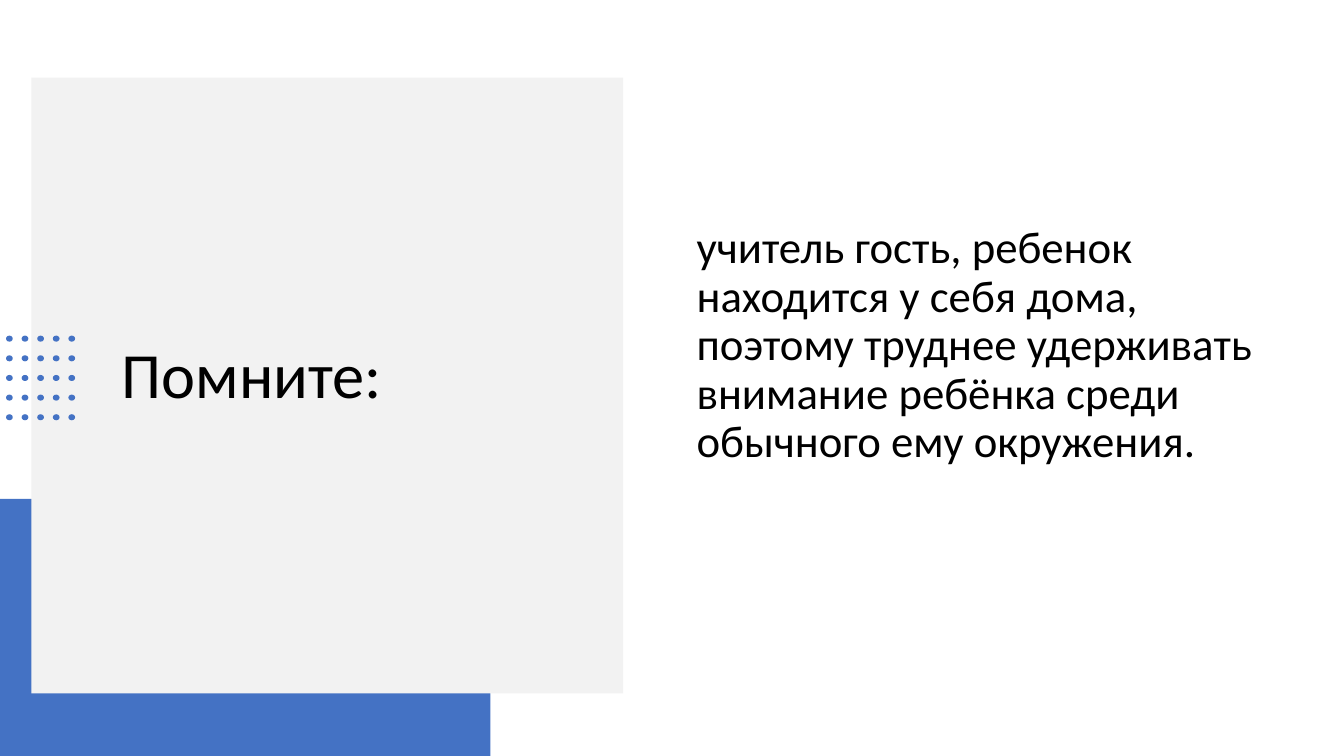
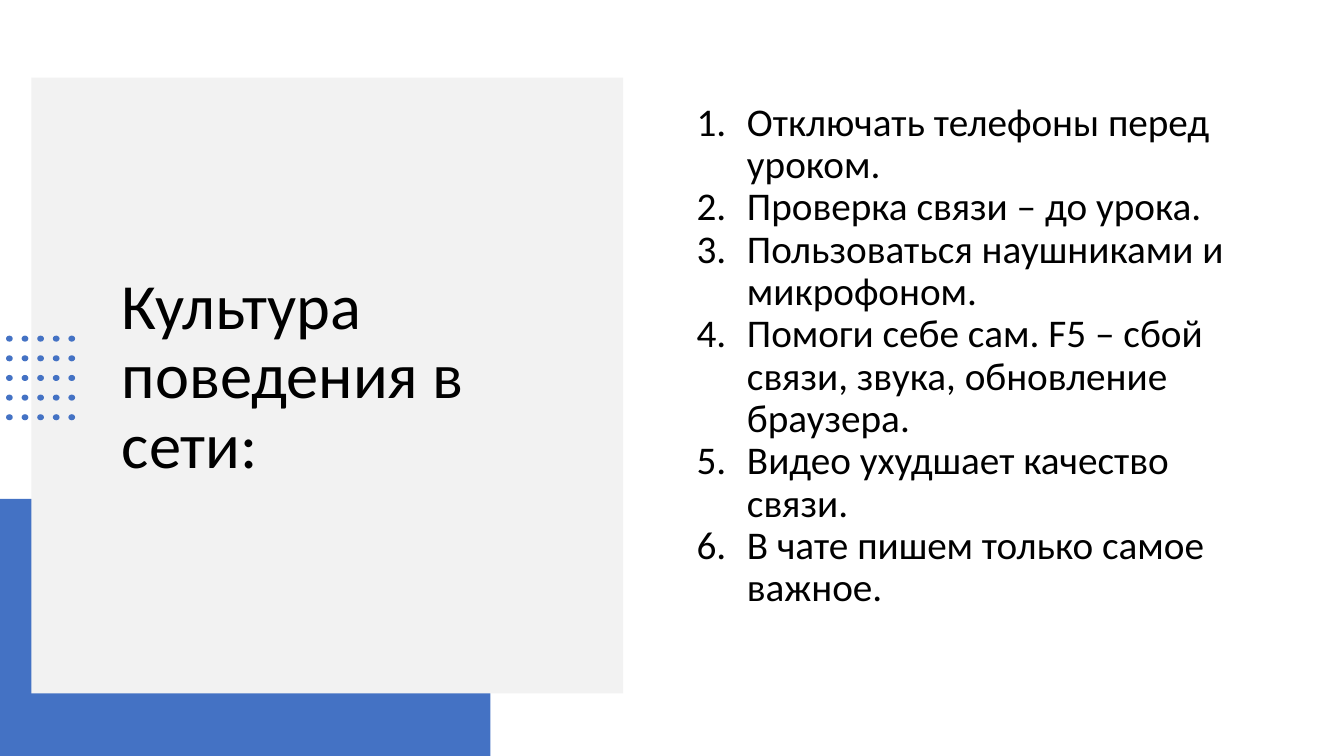
from itertools import product

from lxml.etree import SubElement
from pptx import Presentation
from pptx.dml.color import RGBColor
from pptx.enum.shapes import MSO_SHAPE
from pptx.enum.text import MSO_ANCHOR, PP_ALIGN
from pptx.oxml.ns import qn
from pptx.util import Inches, Pt

# Shared look
WIDTH, HEIGHT = Inches(13.33), Inches(7.5)
BLUE, PALE_GREY, BLACK = "4472C4", "F2F2F2", "000000"
FONT = "Calibri"
LINE_SPACING = 0.9
LINE_HEIGHT = 1.1  # height of a spaced line, relative to its font size

# Areas as left, top, width, height in percent of the slide
CORNER_BAND = (0, 66, 36.5, 34)
TITLE_PANEL = (2.33, 10.27, 44.04, 81.47)
TITLE_AREA = (8.33, 19.6, 34.43, 60.8)
BODY_AREA = (51.09, 10.93, 44.04, 78.13)

# Dot grid, in percent of the slide
DOTS_PER_SIDE = 5
DOTS_LEFT, DOTS_TOP = 0.45, 44.4
DOT_STEP_X, DOT_STEP_Y = 1.16, 2.6
DOT_WIDTH, DOT_HEIGHT = 0.5, 0.8

REMINDER = ("учитель гость, ребенок находится у себя дома, поэтому труднее "
            "удерживать внимание ребёнка среди обычного ему окружения.")
RULES = [
    "Отключать телефоны перед уроком.",
    "Проверка связи – до урока.",
    "Пользоваться наушниками и микрофоном.",
    "Помоги себе сам. F5 – сбой связи, звука, обновление браузера.",
    "Видео ухудшает качество связи.",
    "В чате пишем только самое важное.",
]


def color(hex_code):
    return RGBColor.from_string(hex_code)


def place(area):
    """Turn percentages of the slide into lengths."""
    return [round(share * side / 100)
            for share, side in zip(area, (WIDTH, HEIGHT) * 2)]


def add_filled(shapes, preset, area, fill):
    figure = shapes.add_shape(preset, *place(area))
    figure.shadow.inherit = False
    figure.fill.solid()
    figure.fill.fore_color.rgb = color(fill)
    figure.line.fill.background()


def add_dots(slide):
    dots = slide.shapes.add_group_shape()
    for column, row in product(range(DOTS_PER_SIDE), repeat=2):
        area = (DOTS_LEFT + column * DOT_STEP_X, DOTS_TOP + row * DOT_STEP_Y,
                DOT_WIDTH, DOT_HEIGHT)
        add_filled(dots.shapes, MSO_SHAPE.OVAL, area, BLUE)


def add_text(slide, area, lines, size, space_before=0):
    """Add vertically centred text and return its frame."""
    frame = slide.shapes.add_textbox(*place(area)).text_frame
    frame.word_wrap = True
    frame.vertical_anchor = MSO_ANCHOR.MIDDLE
    frame.text = "\n".join(lines)
    for paragraph in frame.paragraphs:
        paragraph.alignment = PP_ALIGN.LEFT
        paragraph.line_spacing = LINE_SPACING
        paragraph.space_before = Pt(space_before)
        paragraph.font.size = Pt(size)
        for run in paragraph.runs:
            run.font.name = FONT
            run.font.size = Pt(size)
            run.font.color.rgb = color(BLACK)
    return frame


def add_body(slide, lines, size, space_before=0):
    """Add body text, raised by keeping one line free below it."""
    body = add_text(slide, BODY_AREA, lines, size, space_before)
    body.margin_bottom += Pt(size * LINE_HEIGHT + space_before)
    return body


def number_paragraphs(frame, indent=Inches(0.5)):
    for paragraph in frame.paragraphs:
        properties = paragraph._p.get_or_add_pPr()
        properties.set("marL", str(indent))
        properties.set("indent", str(-indent))
        SubElement(properties, qn("a:buFont"), typeface="+mj-lt")
        SubElement(properties, qn("a:buAutoNum"), type="arabicPeriod")
        # Default run properties must follow the numbering
        defaults = properties.find(qn("a:defRPr"))
        if defaults is not None:
            properties.append(defaults)


def add_titled_slide(deck, title):
    slide = deck.slides.add_slide(deck.slide_layouts[6])
    add_filled(slide.shapes, MSO_SHAPE.RECTANGLE, CORNER_BAND, BLUE)
    add_filled(slide.shapes, MSO_SHAPE.RECTANGLE, TITLE_PANEL, PALE_GREY)
    add_text(slide, TITLE_AREA, [title], 46)
    add_dots(slide)
    return slide


def main():
    deck = Presentation()
    deck.slide_width, deck.slide_height = WIDTH, HEIGHT

    # Reminder
    reminder_slide = add_titled_slide(deck, "Помните:")
    add_body(reminder_slide, [REMINDER], 32, space_before=10)

    # Rules of online behaviour
    rules_slide = add_titled_slide(deck, "Культура поведения в сети:")
    number_paragraphs(add_body(rules_slide, RULES, 28))

    deck.save("out.pptx")


if __name__ == "__main__":
    main()
